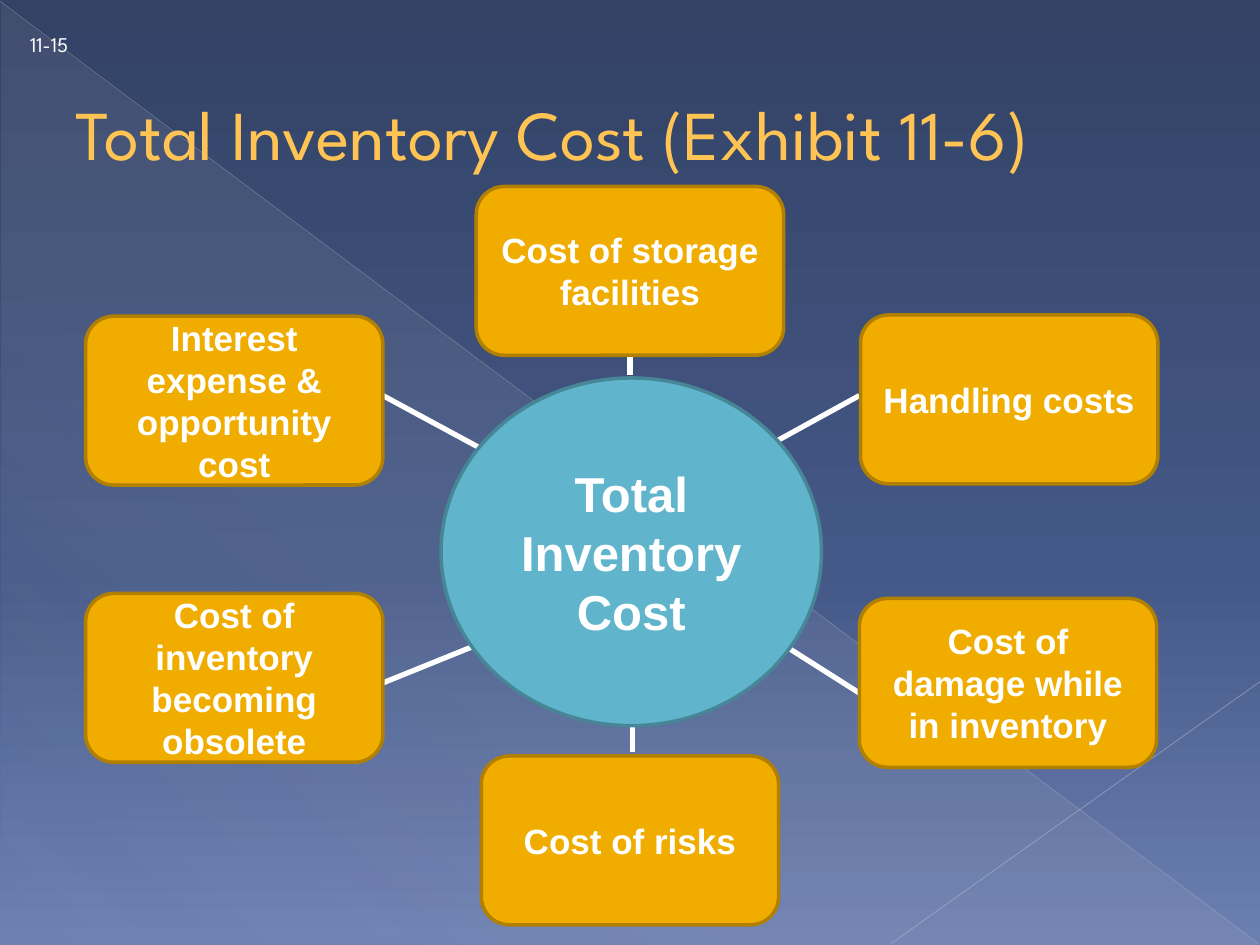
from lxml import etree
from pptx import Presentation
from pptx.dml.color import RGBColor
from pptx.enum.shapes import MSO_CONNECTOR, MSO_SHAPE
from pptx.enum.text import MSO_ANCHOR, PP_ALIGN
from pptx.oxml.ns import qn
from pptx.util import Inches, Pt

LEFT, MID = PP_ALIGN.LEFT, PP_ALIGN.CENTER
CENTER, BOTTOM = MSO_ANCHOR.MIDDLE, MSO_ANCHOR.BOTTOM
ROUND, OVAL = MSO_SHAPE.ROUNDED_RECTANGLE, MSO_SHAPE.OVAL
WEDGE, LINE = MSO_SHAPE.RIGHT_TRIANGLE, MSO_CONNECTOR.STRAIGHT

COLORS = {"white": "FFFFFF", "title": "FFC453", "box": "F0AD00",
          "edge": "B28000", "hub": "60B5CC", "rim": "478697",
          "ray1": "B9BDC8", "ray2": "C1C4CE"}
FONTS = {
    "title": {"size": Pt(40), "name": "League Spartan"},
    "page": {"size": Pt(12), "name": "League Spartan"},
    "box": {"size": Pt(20), "name": "Arial", "bold": True},
    "hub": {"size": Pt(28), "name": "Arial", "bold": True},
}

# Gradient stops: position, colour, opacity (percent)
SKY = [(0, "334265", 100), (60, "445887", 100), (100, "6C7FB1", 100)]
HAZE = [(0, "D4D4D6", 10), (70, "D4D4D6", 8), (100, "D4D4D6", 1)]

# Start, end, colour, width, opacity
RAYS = [((0, 0.01), (9.99, 7.49), "ray1", 0.39, 35),
        ((10, 5.41), (7.07, 7.49), "ray2", 0.47, 45)]

BOX_W, BOX_H = 2.36, 1.34
# Text, left, top, width, spoke start at the box, spoke end at the hub
COSTS = [
    ("Cost of storage facilities", 3.78, 1.48, 2.44, (5, 2.82), (5, 2.98)),
    ("Handling costs", 6.83, 2.5, BOX_W, (6.82, 3.14), (6.11, 3.53)),
    ("Cost of damage while in inventory", 6.82, 4.75, BOX_W,
     (6.82, 5.5), (6.19, 5.1)),
    ("Cost of risks", 3.82, 6, BOX_W, (5.02, 5.97), (5.02, 5.76)),
    ("Cost of inventory becoming obsolete", 0.68, 4.71, BOX_W,
     (3.04, 5.42), (3.83, 5.1)),
    ("Interest expense & opportunity cost", 0.68, 2.51, BOX_W,
     (3.04, 3.14), (3.91, 3.61)),
]
HUB = ["Total", "Inventory", "Cost"]


def rgb(key):
    return RGBColor.from_string(COLORS[key])


def fade(color, share):
    """Set the opacity of a colour element in percent."""
    etree.SubElement(color, qn("a:alpha"), val=str(share * 1000))


def blend(root, stops, angle):
    """Fill the gradient found under root with stops."""
    grad = next(root.iter(qn("a:gradFill")))
    for child in list(grad):
        grad.remove(child)
    rows = etree.SubElement(grad, qn("a:gsLst"))
    for pos, color, share in stops:
        stop = etree.SubElement(rows, qn("a:gs"), pos=str(pos * 1000))
        fade(etree.SubElement(stop, qn("a:srgbClr"), val=color), share)
    etree.SubElement(grad, qn("a:lin"), ang=str(angle * 60000), scaled="0")


def write(shape, lines, style, color, align=MID, anchor=CENTER, wrap=True):
    frame = shape.text_frame
    frame.word_wrap, frame.vertical_anchor = wrap, anchor
    frame.text = "\n".join(lines)
    for para in frame.paragraphs:
        para.alignment = align
        para.font.color.rgb = rgb(color)
        for run in para.runs:
            run.font.color.rgb = rgb(color)
            for key, value in FONTS[style].items():
                setattr(run.font, key, value)


def label(slide, area, text, style, color, **format):
    box = slide.shapes.add_textbox(*map(Inches, area))
    write(box, [text], style, color, **format)


def node(slide, kind, area, lines, style, fill, edge, wrap=True):
    shape = slide.shapes.add_shape(kind, *map(Inches, area))
    shape.shadow.inherit = False
    shape.fill.solid()
    shape.fill.fore_color.rgb = rgb(fill)
    shape.line.color.rgb = rgb(edge)
    shape.line.width = Pt(2)
    write(shape, lines, style, "white", wrap=wrap)


def link(slide, start, end, color="white", width=3, share=100):
    line = slide.shapes.add_connector(LINE, *map(Inches, start + end))
    line.line.color.rgb = rgb(color)
    line.line.width = Pt(width)
    props = line.element.spPr
    if share < 100:
        fade(next(props.iter(qn("a:srgbClr"))), share)
    etree.SubElement(props, qn("a:effectLst"))


def backdrop(slide):
    slide.background.fill.gradient()
    blend(slide.element, SKY, 90)
    wedge = slide.shapes.add_shape(
        WEDGE, *map(Inches, (0.01, 0.02, 9.99, 7.48)))
    wedge.shadow.inherit = False
    wedge.line.fill.background()
    wedge.fill.gradient()
    blend(wedge.element, HAZE, 133)
    for ray in RAYS:
        link(slide, *ray)


def main():
    deck = Presentation()
    deck.slide_width, deck.slide_height = Inches(10), Inches(7.5)
    slide = deck.slides.add_slide(deck.slide_layouts[6])
    backdrop(slide)
    label(slide, (0.5, 0.29, 9.25, 1.53),
          "Total Inventory Cost (Exhibit 11-6)", "title", "title", align=LEFT)
    for text, left, top, width, start, end in COSTS:
        link(slide, start, end)
        node(slide, ROUND, (left, top, width, BOX_H), [text],
             "box", "box", "edge")
    node(slide, OVAL, (3.5, 3, 3.02, 2.76), HUB, "hub", "hub", "rim",
         wrap=False)
    label(slide, (0, 0.17, 0.78, 0.33), "11-15", "page", "white",
          anchor=BOTTOM)
    deck.save("out.pptx")


if __name__ == "__main__":
    main()
